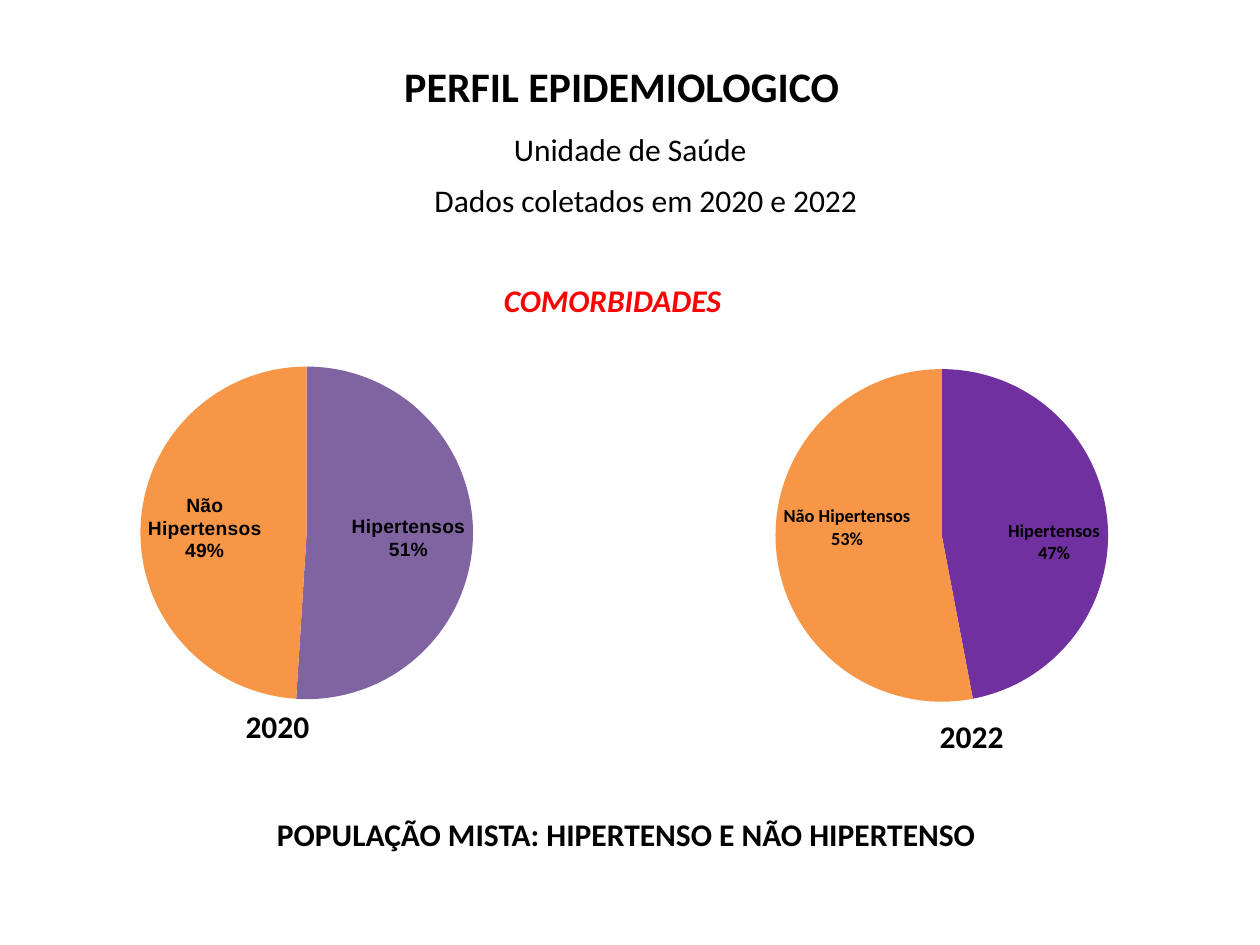
from lxml import etree
from pptx import Presentation
from pptx.chart.data import CategoryChartData as ChartData
from pptx.dml.color import RGBColor
from pptx.enum.chart import XL_CHART_TYPE as ChartType, XL_LABEL_POSITION as LabelPosition
from pptx.enum.text import MSO_AUTO_SIZE as AutoSize
from pptx.oxml.ns import qn
from pptx.util import Inches, Pt

COLUMNS, ROWS = 100, 75
CATEGORIES = ["Hipertensos", "Não Hipertensos"]
ORANGE = "F79646"

# text, (column, row, width, height), format values that differ from the base style
TEXTS = [
    ("PERFIL EPIDEMIOLOGICO", (31.1, 4.3, 36.9, 5), {"size": Pt(24), "bold": True}),
    ("Unidade de Saúde", (39.8, 9.8, 22.7, 4), {}),
    ("Dados coletados em 2020 e 2022", (33.5, 13.9, 36, 4), {}),
    ("COMORBIDADES", (39, 21.8, 19.6, 4), {"bold": True, "italic": True, "color": "FF0000"}),
    ("2020", (18.5, 55.6, 7.1, 4), {"bold": True}),
    ("2022", (73.6, 56.4, 7.1, 4), {"bold": True}),
    ("POPULAÇÃO MISTA: HIPERTENSO E NÃO HIPERTENSO", (21, 64.2, 58, 4), {"bold": True}),
]

# (column, row, width, height), percentages, slice colours, plot area, label format
PIES = [
    ((-2.9, 25.8, 50, 30), (51, 49), ("8064A2", ORANGE), (0.09, 0.11, 0.91, 0.88),
     {"size": Pt(11), "name": "Arial"}),
    ((50, 27.5, 50, 30), (47, 53), ("7030A0", ORANGE), (0.03, 0.06, 0.93, 0.88),
     {"size": Pt(10.5)}),
]


def rgb(value):
    return RGBColor.from_string(value)


def set_values(target, values):
    for name, value in values.items():
        setattr(target, name, value)


def set_plot_area(chart, shares):
    """Fix the inner plot area as shares (x, y, w, h) of the chart's size."""
    plot_area = chart.element.find(".//" + qn("c:plotArea"))
    for layout in plot_area.findall(qn("c:layout")):
        plot_area.remove(layout)
    layout = etree.Element(qn("c:layout"))
    plot_area.insert(0, layout)
    manual = etree.SubElement(layout, qn("c:manualLayout"))
    settings = {"layoutTarget": "inner", "xMode": "edge", "yMode": "edge"}
    settings.update(zip("xywh", shares))
    for tag, value in settings.items():
        etree.SubElement(manual, qn("c:" + tag)).set("val", str(value))


class SlideBuilder:
    base_font = {"name": "Calibri", "size": Pt(18), "bold": False, "italic": False}

    def __init__(self, presentation):
        self.column = presentation.slide_width / COLUMNS
        self.row = presentation.slide_height / ROWS
        self.slide = presentation.slides.add_slide(presentation.slide_layouts[6])

    def place(self, box):
        units = (self.column, self.row) * 2
        return [round(length * unit) for length, unit in zip(box, units)]

    def style_font(self, font, color="000000", **changes):
        set_values(font, {**self.base_font, **changes})
        font.color.rgb = rgb(color)

    def text(self, wording, box, style):
        frame = self.slide.shapes.add_textbox(*self.place(box)).text_frame
        set_values(frame, {"word_wrap": False, "auto_size": AutoSize.SHAPE_TO_FIT_TEXT})
        run = frame.paragraphs[0].add_run()
        run.text = wording
        self.style_font(run.font, **style)

    def pie(self, box, values, colors, plot_shares, label_style):
        data = ChartData()
        data.categories = CATEGORIES
        data.add_series("Pacientes", values)
        chart = self.slide.shapes.add_chart(ChartType.PIE, *self.place(box), data).chart
        set_values(chart, {"has_title": False, "has_legend": False})
        self.style_font(chart.font, size=Pt(10))
        set_plot_area(chart, plot_shares)

        plot = chart.plots[0]
        plot.vary_by_categories = True
        series = plot.series[0]
        for index, color in enumerate(colors):
            fill = series.points[index].format.fill
            fill.solid()
            fill.fore_color.rgb = rgb(color)

        labels = series.data_labels
        set_values(labels, {"show_value": False, "show_category_name": True,
                            "show_percentage": True, "position": LabelPosition.INSIDE_END})
        self.style_font(labels.font, bold=True, **label_style)
        separator = etree.Element(qn("c:separator"))
        separator.text = "\n"
        chart.element.find(".//" + qn("c:showBubbleSize")).addnext(separator)


def main():
    presentation = Presentation()
    set_values(presentation, {"slide_width": Inches(10), "slide_height": Inches(7.5)})
    builder = SlideBuilder(presentation)
    for text in TEXTS:
        builder.text(*text)
    for pie in PIES:
        builder.pie(*pie)
    presentation.save("out.pptx")


if __name__ == "__main__":
    main()
